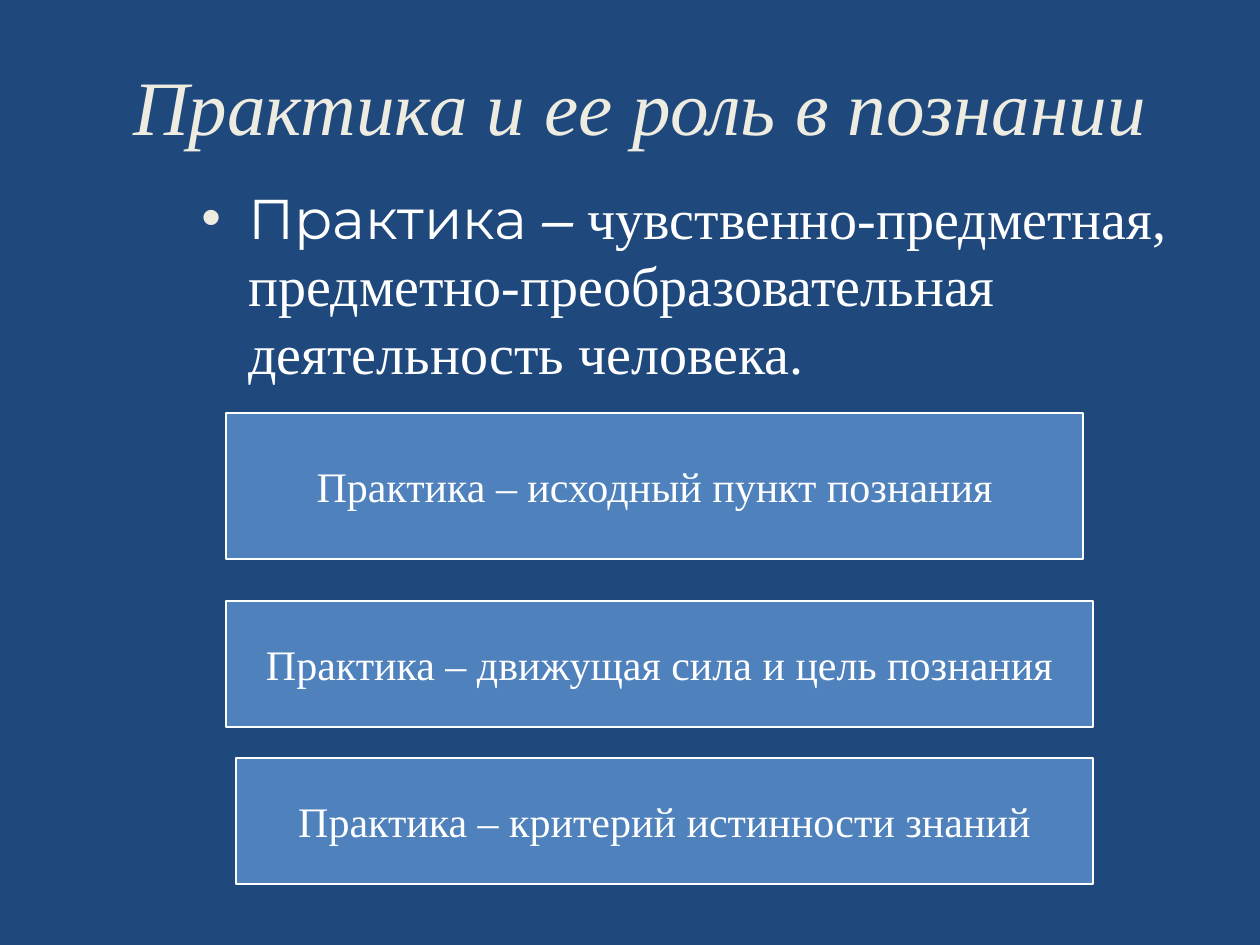
from lxml import etree
from pptx import Presentation
from pptx.dml.color import RGBColor
from pptx.enum.shapes import MSO_SHAPE as Shape
from pptx.enum.text import MSO_ANCHOR as Anchor, PP_ALIGN as Align
from pptx.oxml.ns import qn
from pptx.util import Cm, Pt

COLORS = {
    "background": "1F497D",
    "box": "4F81BD",
    "cream": "EEECE1",
    "white": "FFFFFF",
}
SERIF = "Times New Roman"


def rgb(name):
    return RGBColor.from_string(COLORS[name])


class SlideBuilder:
    def __init__(self, prs):
        self.s = prs.slides.add_slide(prs.slide_layouts[5])
        fill = self.s.background.fill
        fill.solid()
        fill.fore_color.rgb = rgb("background")

    def style(self, r, size, color="white", font=SERIF, italic=False):
        r.font.name = font
        r.font.size = Pt(size)
        r.font.italic = italic
        r.font.color.rgb = rgb(color)

    def title(self, text, left, top, width, height):
        sp = self.s.shapes.title
        sp.left, sp.top, sp.width, sp.height = Cm(left), Cm(top), Cm(width), Cm(height)
        tf = sp.text_frame
        tf.text = text
        tf.vertical_anchor = Anchor.BOTTOM
        p = tf.paragraphs[0]
        p.alignment = Align.RIGHT
        self.style(p.runs[0], 44, "cream", italic=True)

    def bullet(self, parts, left, top, width, height):
        sp = self.s.shapes.add_textbox(Cm(left), Cm(top), Cm(width), Cm(height))
        tf = sp.text_frame
        tf.word_wrap = True
        p = tf.paragraphs[0]
        p.space_before = Pt(6.4)
        for text, font, italic in parts:
            r = p.add_run()
            r.text = text
            self.style(r, 32, font=font, italic=italic)
        pPr = p._p.get_or_add_pPr()
        indent = Cm(0.95)
        pPr.set("marL", str(indent))
        pPr.set("indent", str(-indent))
        color = etree.SubElement(pPr, qn("a:buClr"))
        etree.SubElement(color, qn("a:srgbClr"), val=COLORS["cream"])
        etree.SubElement(pPr, qn("a:buFont"), typeface="Arial")
        etree.SubElement(pPr, qn("a:buChar"), char="•")

    def box(self, text, left, top, width, height):
        sp = self.s.shapes.add_shape(
            Shape.RECTANGLE, Cm(left), Cm(top), Cm(width), Cm(height))
        sp.shadow.inherit = False
        sp.fill.solid()
        sp.fill.fore_color.rgb = rgb("box")
        sp.line.color.rgb = rgb("white")
        sp.line.width = Pt(1)
        tf = sp.text_frame
        tf.text = text
        tf.word_wrap = False
        tf.vertical_anchor = Anchor.MIDDLE
        p = tf.paragraphs[0]
        p.alignment = Align.CENTER
        self.style(p.runs[0], 24)


def main():
    prs = Presentation()
    prs.slide_width, prs.slide_height = Cm(25.4), Cm(19.05)
    slide = SlideBuilder(prs)
    slide.title("Практика и ее роль в познании", 1.78, 0.99, 21.59, 2.18)
    slide.bullet([
        ("Практика ", "Montserrat", False),
        ("–", "Arial", True),
        (" чувственно-предметная, предметно-преобразовательная"
         " деятельность человека.", SERIF, False),
    ], 3.81, 3.58, 21.59, 12.93)
    for role, left, top, width, height in [
        ("исходный пункт познания", 4.56, 8.33, 17.27, 2.94),
        ("движущая сила и цель познания", 4.56, 12.11, 17.47, 2.54),
        ("критерий истинности знаний", 4.76, 15.28, 17.27, 2.54),
    ]:
        slide.box(f"Практика – {role}", left, top, width, height)
    prs.save("out.pptx")


if __name__ == "__main__":
    main()
